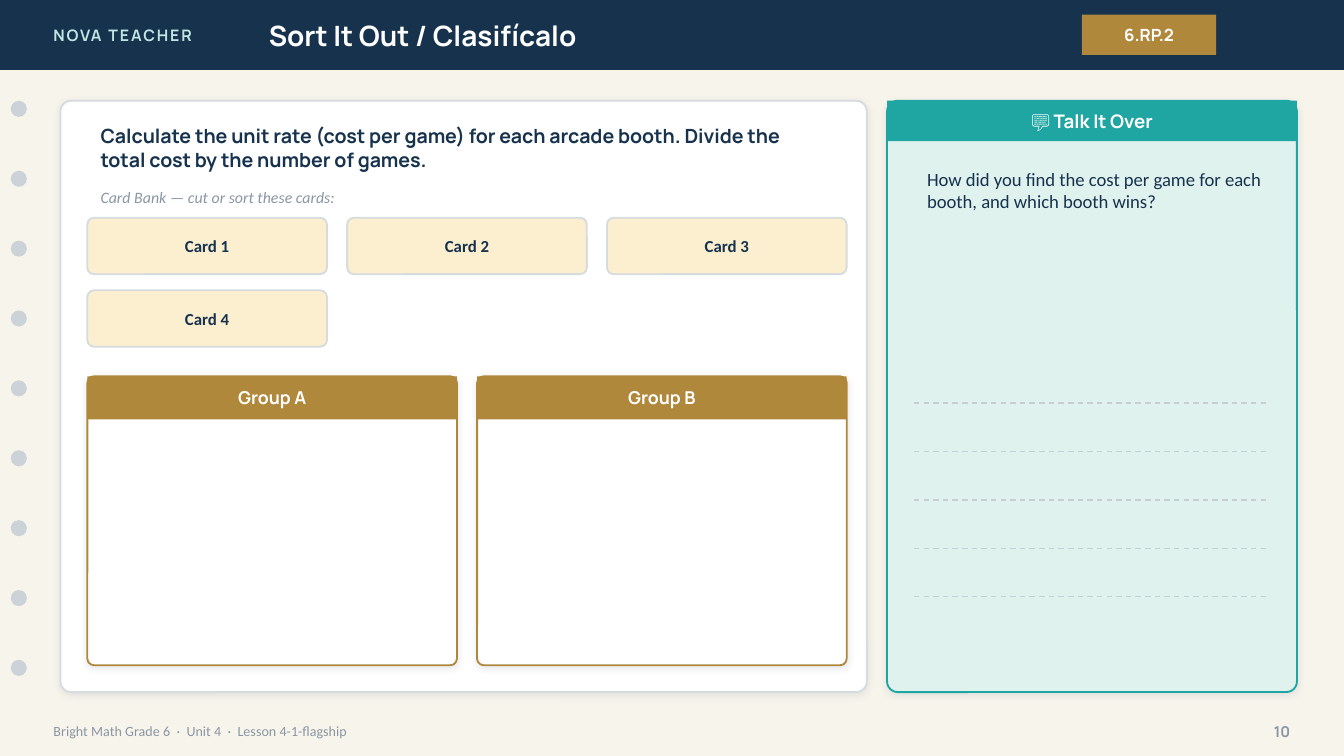
from lxml import etree
from pptx import Presentation
from pptx.dml.color import RGBColor
from pptx.enum.dml import MSO_LINE
from pptx.enum.shapes import MSO_CONNECTOR, MSO_SHAPE
from pptx.enum.text import MSO_ANCHOR, MSO_AUTO_SIZE, PP_ALIGN
from pptx.oxml import parse_xml
from pptx.oxml.ns import nsdecls, qn
from pptx.util import Pt

RECT, ROUND, OVAL = MSO_SHAPE.RECTANGLE, MSO_SHAPE.ROUNDED_RECTANGLE, MSO_SHAPE.OVAL
LEFT, MID, RIGHT = PP_ALIGN.LEFT, PP_ALIGN.CENTER, PP_ALIGN.RIGHT
TOP, CENTER = MSO_ANCHOR.TOP, MSO_ANCHOR.MIDDLE
NO_FIT = MSO_AUTO_SIZE.NONE
STRAIGHT, DASH = MSO_CONNECTOR.STRAIGHT, MSO_LINE.DASH

NAVY, GOLD, TEAL, GRAY = "17324D", "B0883B", "1FA6A2", "8A96A3"
WHITE, EDGE = "FFFFFF", "D6DBDF"
HEAD, BODY = "Manrope", "Calibri"


def color(code):
    return RGBColor.from_string(code)


def write(shape, text, size, font, ink, bold=False, italic=False,
          align=LEFT, anchor=CENTER):
    frame = shape.text_frame
    frame.word_wrap = True
    frame.auto_size = NO_FIT
    frame.vertical_anchor = anchor
    frame.text = text
    para = frame.paragraphs[0]
    para.alignment = align
    face = para.runs[0].font
    face.size, face.name = Pt(size), font
    face.bold, face.italic = bold, italic
    face.color.rgb = color(ink)
    return para.runs[0]


def label(slide, box, *args, **style):
    shape = slide.shapes.add_textbox(*map(Pt, box))
    return write(shape, *args, **style)


def block(slide, kind, box, fill, edge=None, radius=None):
    shape = slide.shapes.add_shape(kind, *map(Pt, box))
    shape.shadow.inherit = False
    shape.fill.solid()
    shape.fill.fore_color.rgb = color(fill)
    if edge:
        shape.line.color.rgb = color(edge)
        shape.line.width = Pt(1)
    else:
        shape.line.fill.background()
    if radius:
        shape.adjustments[0] = radius / min(box[2:])
    return shape


def panel(slide, box, fill, edge, radius):
    """Rounded box with a soft shadow below it."""
    shape = block(slide, ROUND, box, fill, edge, radius)
    effects = shape._element.spPr.find(qn("a:effectLst"))
    effects.append(parse_xml(
        f'<a:outerShdw {nsdecls("a")} blurRad="{Pt(4)}" dist="{Pt(1)}" '
        'dir="5400000" algn="bl" rotWithShape="0"><a:srgbClr val="1C2E42">'
        '<a:alpha val="10000"/></a:srgbClr></a:outerShdw>'))


def titled(slide, box, tall, text, size, fill, edge, radius):
    """Panel with a coloured heading strip."""
    x, y, w, h = box
    panel(slide, box, fill, edge, radius)
    strip = block(slide, RECT, (x, y, w, tall), edge)
    write(strip, text, size, HEAD, WHITE, bold=True, align=MID)


def header(slide, box):
    x, y, w, h = box
    block(slide, RECT, box, NAVY)
    run = label(slide, (x + 21.6, y, 172.8, h), "NOVA TEACHER", 8.5, HEAD,
                "BFE6E2", bold=True)
    run.font._element.set("spc", "100")

    # Title, lifted above the bar
    title = slide.shapes.title
    title.left, title.top, title.width, title.height = map(
        Pt, (x + 136.8, y, 403.2, h))
    write(title, "Sort It Out / Clasifícalo", 15, HEAD, WHITE, bold=True)
    slide.shapes._spTree.append(title._element)

    # Standard code
    badge = block(slide, RECT, (x + 579.6, y + 7.92, 72, 21.6), GOLD)
    write(badge, "6.RP.2", 9, HEAD, WHITE, bold=True, align=MID)


def holes(slide, box, count):
    x, y, w, h = box
    step = (h - w) / (count - 1)
    for i in range(count):
        block(slide, OVAL, (x, y + i * step, w, w), "CBD3D9")


def footer(slide, box):
    x, y, w, h = box
    label(slide, (x, y, 504, h),
          "Bright Math Grade 6  ·  Unit 4  ·  Lesson 4-1-flagship",
          7.5, BODY, GRAY)
    label(slide, (x + w - 36, y, 36, h), "10", 8, HEAD, GRAY,
          bold=True, align=RIGHT)


def sorting(slide, box):
    x, y, w, h = box
    panel(slide, box, WHITE, EDGE, 5.7)
    left, wide, gap = x + 14.4, 406.8, 10.8
    label(slide, (left, y + 10.8, 403.2, 28.8),
          "Calculate the unit rate (cost per game) for each arcade booth. "
          "Divide the total cost by the number of games.",
          10.5, HEAD, NAVY, bold=True)
    label(slide, (left, y + 43.2, 403.2, 17.28),
          "Card Bank — cut or sort these cards:", 8.5, BODY, GRAY, italic=True)

    # Card bank, three to a row
    card = (wide - 2 * gap) / 3
    for i in range(4):
        row, col = divmod(i, 3)
        spot = (left + col * (card + gap), y + 62.64 + row * 38.88, card, 30.24)
        shape = block(slide, ROUND, spot, "FBEFD0", EDGE, 3.6)
        write(shape, f"Card {i + 1}", 9, BODY, NAVY, bold=True, align=MID)

    # Sorting groups
    half = (wide - gap) / 2
    for i, name in enumerate("AB"):
        spot = (left + i * (half + gap), y + 147.6, half, 154.8)
        titled(slide, spot, 23.04, f"Group {name}", 9.5, WHITE, GOLD, 3.6)


def talk(slide, box):
    x, y, w, h = box
    titled(slide, box, 21.6, "💬 Talk It Over", 10, "DFF2EE", TEAL, 5.7)
    label(slide, (x + 14.4, y + 32.4, 194.4, 108),
          "How did you find the cost per game for each booth, "
          "and which booth wins?", 10, BODY, NAVY, anchor=TOP)

    # Writing lines
    for i in range(5):
        at = Pt(y + 162 + i * 25.92)
        rule = slide.shapes.add_connector(
            STRAIGHT, Pt(x + 14.4), at, Pt(x + w - 14.4), at)
        rule.line.color.rgb = color("C7CDD2")
        rule.line.width = Pt(0.75)
        rule.line.dash_style = DASH
        etree.SubElement(rule._element.spPr, qn("a:effectLst"))


def main():
    deck = Presentation()
    deck.slide_width, deck.slide_height = Pt(720), Pt(405)
    slide = deck.slides.add_slide(deck.slide_layouts[5])
    back = slide.background.fill
    back.solid()
    back.fore_color.rgb = color("F7F4EC")

    header(slide, (0, 0, 720, 37.44))
    holes(slide, (5.76, 54, 8.64, 308.16), 9)
    footer(slide, (21.6, 381.6, 676.8, 20.16))
    sorting(slide, (32.4, 54, 432, 316.8))
    talk(slide, (475.2, 54, 219.6, 316.8))
    deck.save("out.pptx")


if __name__ == "__main__":
    main()
